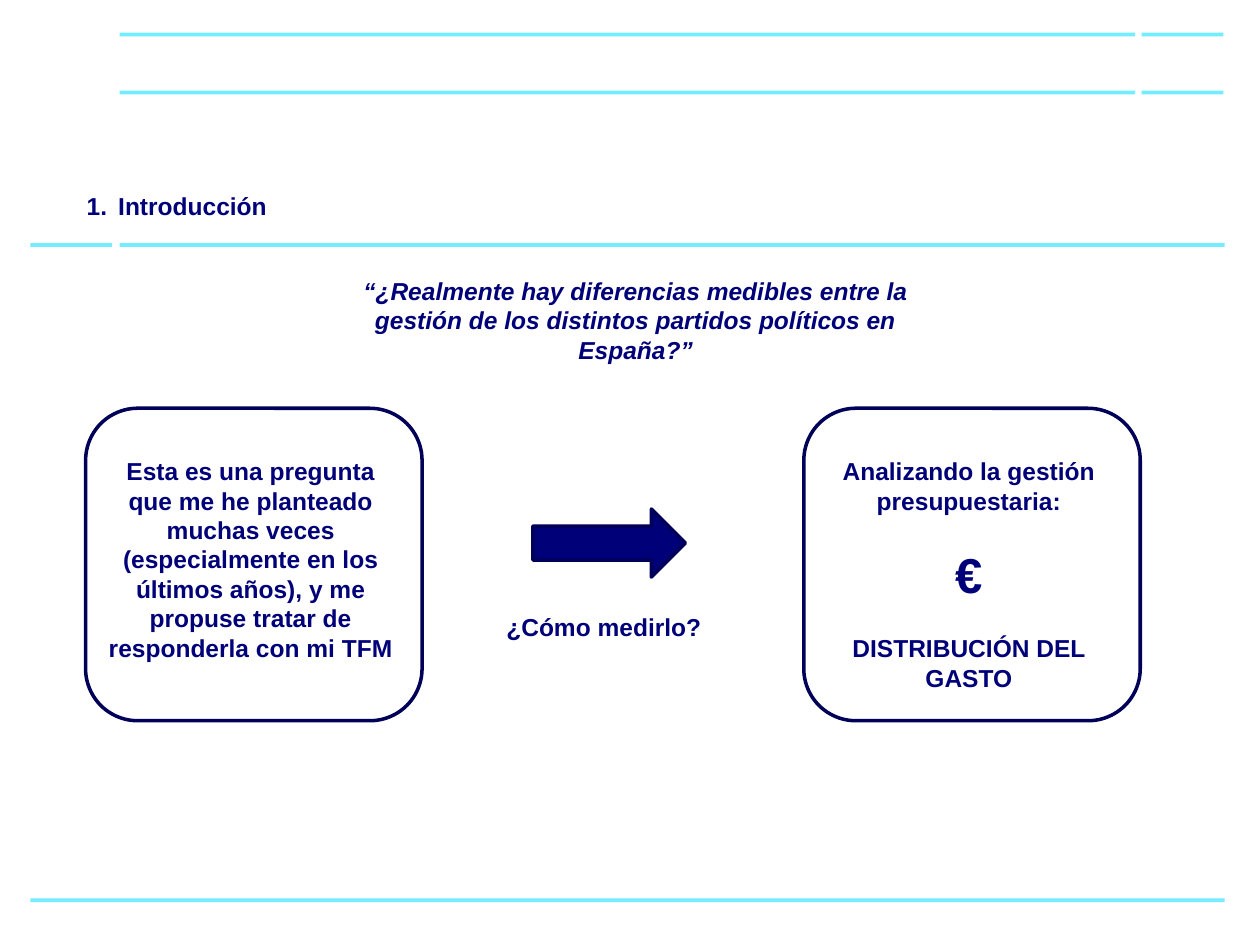
from pptx import Presentation
from pptx import util as u
from pptx.dml.color import RGBColor
from pptx.enum import shapes, text
from lxml import etree

NAVY = RGBColor(0x00, 0x00, 0x78)
EDGE = RGBColor(0x00, 0x00, 0x59)
CYAN = RGBColor(0x73, 0xED, 0xFF)
KIND = shapes.MSO_SHAPE
ALIGN = text.PP_ALIGN
NS = "http://schemas.openxmlformats.org/drawingml/2006/main"


def add_shape(slide, kind, box, fill=None, line=None):
    shape = slide.shapes.add_shape(kind, *map(u.Inches, box))
    shape.shadow.inherit = False
    if fill is None:
        shape.fill.background()
    else:
        shape.fill.solid()
        shape.fill.fore_color.rgb = fill
    if line is None:
        shape.line.fill.background()
    else:
        shape.line.color.rgb = line
        shape.line.width = u.Pt(2)


def add_bar(slide, left, top, width):
    add_shape(slide, KIND.RECTANGLE, (left, top, width, 0.03), CYAN)


def indent(para, left, first=0):
    props = para._p.get_or_add_pPr()
    props.set("marL", str(u.Inches(left)))
    props.set("indent", str(u.Inches(first)))
    return props


def add_number(para):
    props = indent(para, 0.5, -0.25)
    color = etree.SubElement(props, f"{{{NS}}}buClr")
    etree.SubElement(color, f"{{{NS}}}srgbClr", val=str(NAVY))
    etree.SubElement(props, f"{{{NS}}}buAutoNum", type="arabicPeriod")


def add_text(slide, box, parts, align=ALIGN.CENTER, italic=None, number=False):
    frame = slide.shapes.add_textbox(*map(u.Inches, box)).text_frame
    frame.word_wrap = True
    frame.margin_left = frame.margin_right = u.Inches(0.1)
    frame.margin_top = frame.margin_bottom = u.Inches(0.1)
    for i, (words, size) in enumerate(parts):
        para = frame.paragraphs[0] if i == 0 else frame.add_paragraph()
        para.alignment = align
        if i:
            para.space_before = u.Pt(17)
        if number:
            add_number(para)
        else:
            indent(para, 0.25)
        run = para.add_run()
        run.text = words
        font = run.font
        font.name = "Arial"
        font.size = u.Pt(size)
        font.bold = True
        font.italic = italic
        font.color.rgb = NAVY


def add_card(slide, left, parts):
    add_text(slide, (left, 3.52, 2.77, 2.33), parts)
    add_shape(slide, KIND.ROUNDED_RECTANGLE, (left + 0.2, 3.24, 2.67, 2.48), line=EDGE)


def main():
    deck = Presentation()
    deck.slide_width, deck.slide_height = u.Inches(10), u.Inches(7.5)
    slide = deck.slides.add_slide(deck.slide_layouts[6])

    for top in (0.26, 0.72):
        add_bar(slide, 0.95, top, 8.06)
        add_bar(slide, 9.06, top, 0.65)
    add_bar(slide, 0.24, 1.93, 0.65)
    add_bar(slide, 0.95, 1.93, 8.77)
    add_bar(slide, 0.24, 7.13, 9.48)

    add_text(slide, (0.34, 1.42, 3.47, 0.47), [("Introducción", 14)],
             ALIGN.LEFT, number=True)
    add_text(slide, (2.18, 2.09, 5.48, 0.81),
             [("“¿Realmente hay diferencias medibles entre la gestión de los "
               "distintos partidos políticos en España?”", 14)], italic=True)
    add_card(slide, 0.48, [
        ("Esta es una pregunta que me he planteado muchas veces (especialmente "
         "en los últimos años), y me propuse tratar de responderla con mi TFM", 14)])
    add_shape(slide, KIND.RIGHT_ARROW, (4.23, 4.04, 1.21, 0.54), NAVY, EDGE)
    add_text(slide, (3.67, 4.76, 2.12, 0.57), [("¿Cómo medirlo?", 14)], ALIGN.JUSTIFY)
    add_card(slide, 6.18, [("Analizando la gestión presupuestaria:", 14),
                           ("€", 28), ("DISTRIBUCIÓN DEL GASTO", 14)])
    deck.save("out.pptx")


if __name__ == "__main__":
    main()
